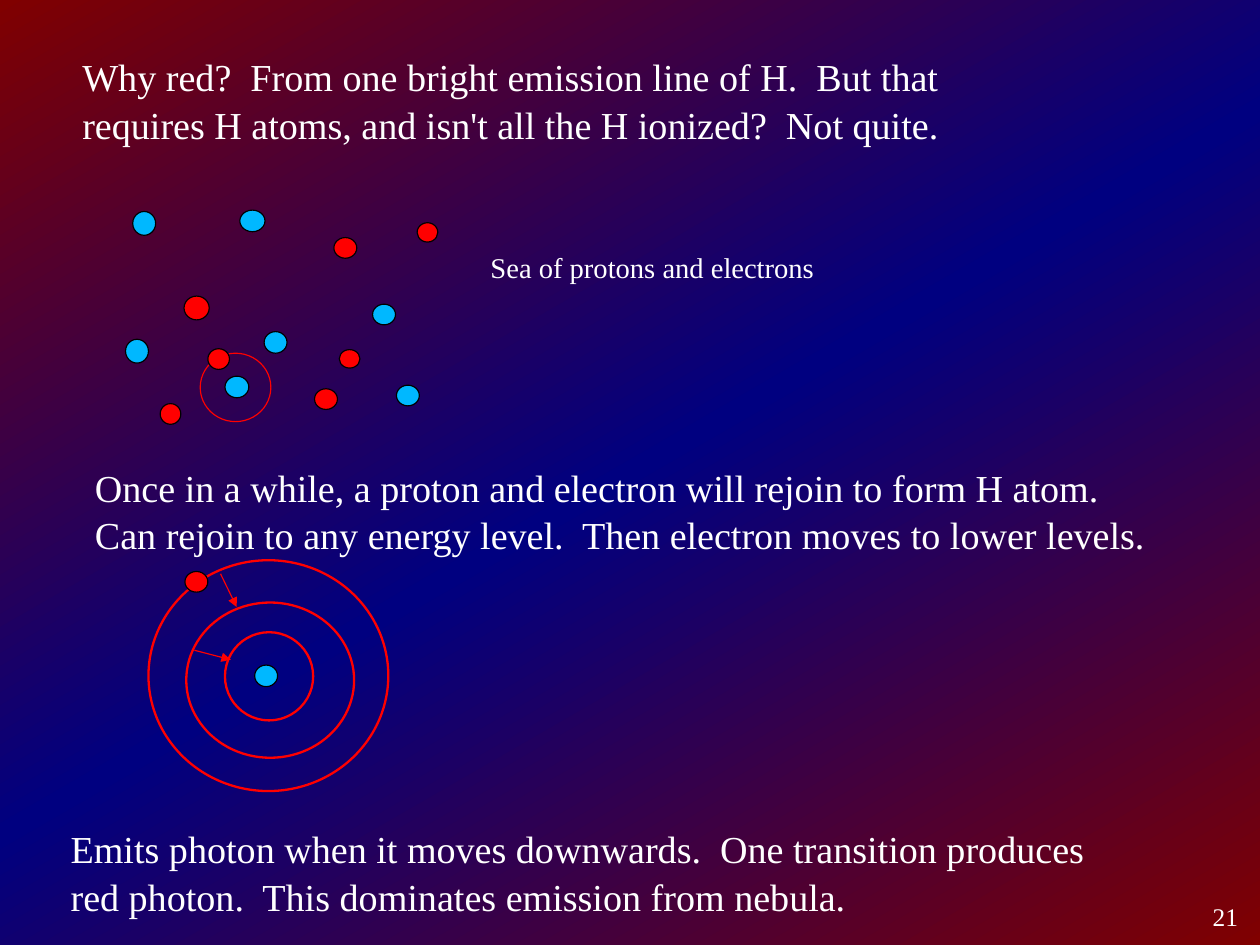
from copy import deepcopy

from lxml import etree
from pptx import Presentation
from pptx.dml.color import RGBColor
from pptx.enum.shapes import MSO_CONNECTOR, MSO_SHAPE
from pptx.enum.text import MSO_ANCHOR, PP_ALIGN
from pptx.oxml.ns import qn
from pptx.util import Cm, Pt

ELLIPSE = MSO_SHAPE.OVAL
STRAIGHT = MSO_CONNECTOR.STRAIGHT
MIDDLE, TOP = MSO_ANCHOR.MIDDLE, MSO_ANCHOR.TOP
LEFT, RIGHT = PP_ALIGN.LEFT, PP_ALIGN.RIGHT

COLORS = {"maroon": "800000", "navy": "000080", "proton": "00B8FF",
          "electron": "FF0000", "outline": "000000", "text": "FFFFFF"}

# Each ellipse is left, top, width, height in cm
PROTONS = [(2.95, 4.7, 0.51, 0.53), (5.87, 7.37, 0.51, 0.48),
           (2.79, 7.54, 0.51, 0.53), (5.33, 4.67, 0.56, 0.48),
           (8.28, 6.76, 0.51, 0.46), (8.81, 8.56, 0.51, 0.46),
           (5, 8.36, 0.53, 0.48)]
ELECTRONS = [(4.09, 6.58, 0.56, 0.53), (7.42, 5.28, 0.51, 0.46),
             (7.54, 7.77, 0.46, 0.41), (6.99, 8.64, 0.51, 0.46),
             (3.56, 8.97, 0.46, 0.46), (9.27, 4.95, 0.46, 0.43)]
CAPTURE_ORBIT = (4.45, 7.85, 1.57, 1.52)
CAPTURED_ELECTRON = (4.62, 7.75, 0.48, 0.46)

NUCLEUS = (5.66, 14.78, 0.51, 0.48)
ENERGY_LEVELS = [(5, 14.05, 1.96, 1.96), (3.3, 12.45, 5.33, 5.13),
                 (4.14, 13.39, 3.73, 3.45)]
ATOM_ELECTRON = (4.11, 12.7, 0.51, 0.46)
TRANSITIONS = [(4.9, 12.75, 5.26, 13.49), (4.32, 14.45, 5.13, 14.66)]


def rgb(name):
    return RGBColor.from_string(COLORS[name])


class SlideBuilder:
    font = "Times New Roman"

    def __init__(self, slide):
        self.s = slide

    def background(self, edge, middle):
        """Fill with a diagonal gradient, edge to middle to edge."""
        fill = self.s.background.fill
        fill.gradient()
        fill.gradient_angle = 300
        stops = self.s.element.find(".//" + qn("a:gsLst"))
        stops.insert(1, deepcopy(stops[0]))
        for i, (stop, name) in enumerate(zip(fill.gradient_stops, (edge, middle, edge))):
            stop.position = i / 2
            stop.color.rgb = rgb(name)

    def ellipse(self, box, line, fill=None, width=0.75):
        sp = self.s.shapes.add_shape(ELLIPSE, *map(Cm, box))
        sp.shadow.inherit = False
        if fill:
            sp.fill.solid()
            sp.fill.fore_color.rgb = rgb(fill)
        else:
            sp.fill.background()
        sp.line.color.rgb = rgb(line)
        sp.line.width = Pt(width)

    def particle(self, box, kind):
        self.ellipse(box, "outline", kind)

    def arrow(self, ends):
        line = self.s.shapes.add_connector(STRAIGHT, *map(Cm, ends))
        line.line.color.rgb = rgb("electron")
        line.line.width = Pt(0.75)
        etree.SubElement(line.line._get_or_add_ln(), qn("a:tailEnd"), type="triangle")
        etree.SubElement(line.element.spPr, qn("a:effectLst"))

    def text(self, box, text, size=24, align=LEFT, anchor=TOP, inset=(0, 0), spacing=1.05):
        tf = self.s.shapes.add_textbox(*map(Cm, box)).text_frame
        tf.word_wrap = True
        tf.vertical_anchor = anchor
        tf.margin_left = tf.margin_right = Cm(inset[0])
        tf.margin_top = tf.margin_bottom = Cm(inset[1])
        tf.text = text
        for p in tf.paragraphs:
            p.alignment = align
            p.line_spacing = spacing
            for r in p.runs:
                r.font.name = self.font
                r.font.size = Pt(size)
                r.font.color.rgb = rgb("text")


def main():
    prs = Presentation()
    prs.slide_width, prs.slide_height = Cm(28), Cm(21)
    b = SlideBuilder(prs.slides.add_slide(prs.slide_layouts[6]))
    b.background("maroon", "navy")

    b.text((1.83, 1.14, 20.78, 2.06),
           "Why red?  From one bright emission line of H.  But that requires "
           "H atoms, and isn't all the H ionized?  Not quite.")

    for box in PROTONS:
        b.particle(box, "proton")
    for box in ELECTRONS:
        b.particle(box, "electron")
    b.ellipse(CAPTURE_ORBIT, "electron")
    b.particle(CAPTURED_ELECTRON, "electron")
    b.text((10.9, 5.51, 7.85, 0.71), "Sea of protons and electrons", size=18)

    b.text((2.11, 10.26, 24.26, 3),
           "Once in a while, a proton and electron will rejoin to form H atom.\n"
           "Can rejoin to any energy level.  Then electron moves to lower levels.")

    b.particle(NUCLEUS, "proton")
    for box in ENERGY_LEVELS:
        b.ellipse(box, "electron", width=1.45)
    b.particle(ATOM_ELECTRON, "electron")
    for ends in TRANSITIONS:
        b.arrow(ends)

    b.text((1.57, 18.29, 23.67, 1.9),
           "Emits photon when it moves downwards.  One transition produces "
           "red photon.  This dominates emission from nebula.")
    b.text((21.23, 19.81, 6.53, 1.12), "21", size=16, align=RIGHT,
           anchor=MIDDLE, inset=(0.25, 0.13), spacing=1)
    prs.save("out.pptx")


if __name__ == "__main__":
    main()
